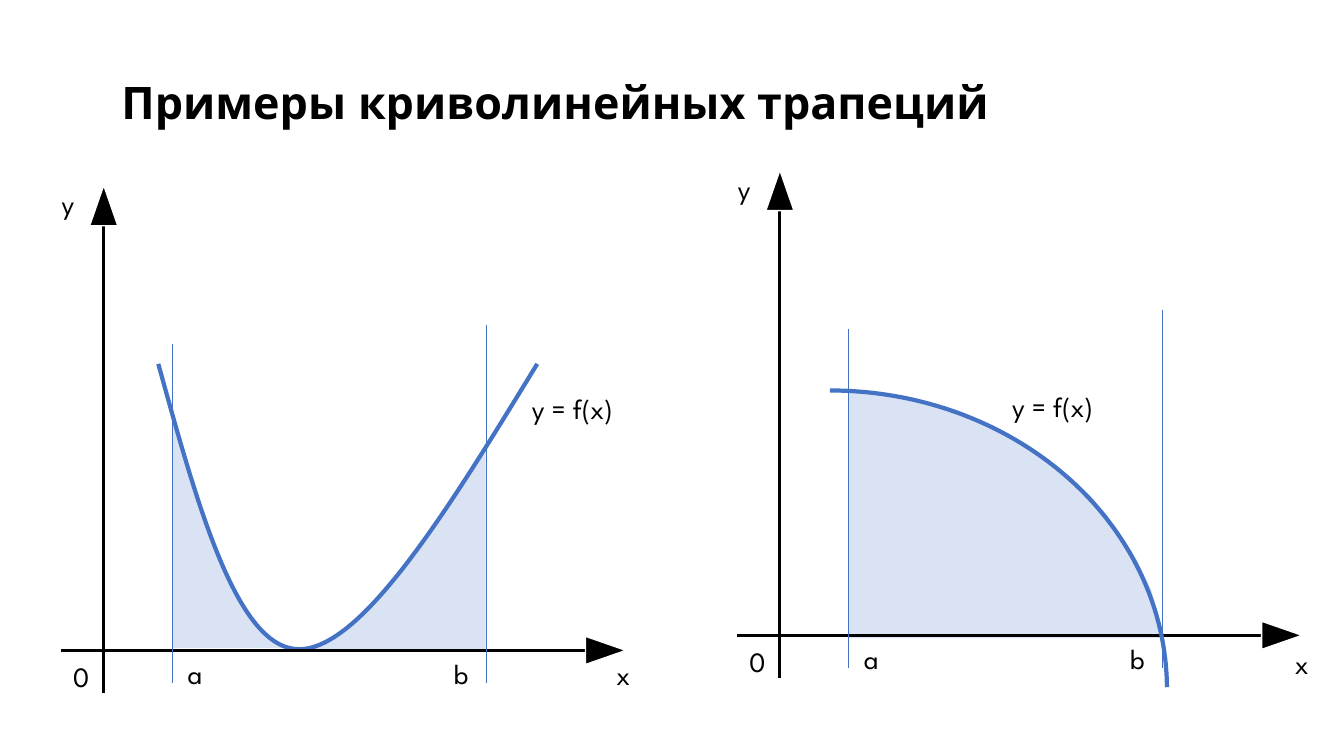
from lxml import etree
from pptx import Presentation
from pptx.dml.color import RGBColor
from pptx.enum.shapes import MSO_CONNECTOR, MSO_SHAPE
from pptx.enum.text import MSO_AUTO_SIZE, PP_ALIGN
from pptx.oxml.ns import qn
from pptx.util import Cm, Pt

STRAIGHT = MSO_CONNECTOR.STRAIGHT
TRIANGLE, ARC = MSO_SHAPE.ISOSCELES_TRIANGLE, MSO_SHAPE.ARC
GROW = MSO_AUTO_SIZE.SHAPE_TO_FIT_TEXT
LEFT, CENTER = PP_ALIGN.LEFT, PP_ALIGN.CENTER

BLACK = RGBColor(0x00, 0x00, 0x00)
WHITE = RGBColor(0xFF, 0xFF, 0xFF)
BLUE = RGBColor(0x44, 0x72, 0xC4)
PALE_BLUE = RGBColor(0xDA, 0xE3, 0xF3)

# Shared geometry in centimetres
AXIS_X, AXIS_Y = 2.61, 16.39
LIMIT_A, LIMIT_B = 4.34, 12.25
SECOND_DX, SECOND_DY = 17.04, -0.38

# Start point, then three points for each Bezier segment
PARABOLA = [(3.99, 9.17), (4.98, 12.75), (5.97, 16.36), (7.54, 16.36),
            (9.14, 16.36), (11.35, 12.75), (13.54, 9.17)]

# Shaded regions under the curves
AREA_UNDER_ARC = [
    (21.39, 9.83), (22, 9.88), (22.78, 9.98), (23.7, 10.26), (24.26, 10.41),
    (25.02, 10.72), (25.78, 11.18), (26.29, 11.51), (26.7, 11.79), (27.03, 12.07),
    (27.46, 12.47), (27.89, 12.98), (28.24, 13.49), (28.63, 14.07), (29.01, 14.86),
    (29.24, 15.65), (29.29, 15.9), (29.29, 16.08), (21.39, 16.08)]
AREA_RIGHT_BRANCH = [
    (12.24, 11.28), (12.24, 16.38), (7.24, 16.38), (7.24, 16.28), (7.26, 16.31),
    (7.44, 16.33), (7.85, 16.31), (8.33, 16.05), (8.76, 15.77), (9.17, 15.42),
    (9.63, 14.96), (10.21, 14.25), (11.1, 12.98), (11.66, 12.19)]
AREA_LEFT_BRANCH = [
    (4.34, 10.36), (4.75, 11.79), (5.23, 13.36), (5.77, 14.58), (6.27, 15.54),
    (6.83, 16.08), (7.11, 16.23), (7.44, 16.33), (4.34, 16.33)]


class GraphSlide:
    font = "League Spartan"

    def __init__(self, slide):
        self.slide = slide

    def text(self, text, left, top, width, height=1.02, size=20, bold=False,
             align=CENTER):
        box = self.slide.shapes.add_textbox(Cm(left), Cm(top), Cm(width), Cm(height))
        frame = box.text_frame
        frame.word_wrap = True
        frame.auto_size = GROW
        paragraph = frame.paragraphs[0]
        paragraph.text = text
        paragraph.alignment = align
        if align == CENTER:
            paragraph.line_spacing = 1.07
            paragraph.space_after = Pt(8)
        font = paragraph.font
        font.name, font.size, font.bold = self.font, Pt(size), bold
        font.color.rgb = BLACK

    def line(self, x1, y1, x2, y2, color, weight):
        line = self.slide.shapes.add_connector(STRAIGHT, Cm(x1), Cm(y1), Cm(x2), Cm(y2))
        line.line.color.rgb = color
        line.line.width = Pt(weight)
        etree.SubElement(line._element.spPr, qn("a:effectLst"))

    def arrowhead(self, left, top, rotation=0):
        head = self.slide.shapes.add_shape(TRIANGLE, Cm(left), Cm(top), Cm(0.71), Cm(1.02))
        head.rotation = rotation
        self.paint(head, BLACK, WHITE, 1)

    def outline(self, points, closed):
        points = [(Cm(x), Cm(y)) for x, y in points]
        builder = self.slide.shapes.build_freeform(*points[0])
        builder.add_line_segments(points[1:], close=closed)
        return builder.convert_to_shape()

    def area(self, points):
        self.paint(self.outline(points, True), PALE_BLUE, None, 0)

    def curve(self, points):
        """Cubic Bezier curve: every three line segments become one curve."""
        shape = self.outline(points, False)
        segments = list(shape._element.iter(qn("a:lnTo")))
        for start in range(0, len(segments), 3):
            cubic = etree.Element(qn("a:cubicBezTo"))
            segments[start].addprevious(cubic)
            for segment in segments[start:start + 3]:
                cubic.append(segment[0])
                segment.getparent().remove(segment)
        self.paint(shape, None, BLUE, 3)

    def arc(self, left, top, width, height):
        arc = self.slide.shapes.add_shape(ARC, Cm(left), Cm(top), Cm(width), Cm(height))
        arc.adjustments[0], arc.adjustments[1] = 162, 215.79
        self.paint(arc, None, BLUE, 3)

    def paint(self, shape, fill, line, weight):
        shape.shadow.inherit = False
        if fill is None:
            shape.fill.background()
        else:
            shape.fill.solid()
            shape.fill.fore_color.rgb = fill
        if line is None:
            shape.line.fill.background()
        else:
            shape.line.color.rgb = line
            shape.line.width = Pt(weight)

    def axes(self, dx=0, dy=0):
        """Axes, limits and labels, shifted by dx and dy."""
        self.line(AXIS_X + dx, 5.18 + dy, AXIS_X + dx, 17.47 + dy, BLACK, 2.25)
        self.line(14.79 + dx, AXIS_Y + dy, 1.54 + dx, AXIS_Y + dy, BLACK, 2.25)
        self.arrowhead(2.26 + dx, 4.67 + dy)
        self.arrowhead(14.91 + dx, 15.88 + dy, 90)
        for x, top in ((LIMIT_A, 8.66), (LIMIT_B, 8.18)):
            self.line(x + dx, top + dy, x + dx, 17.22 + dy, BLUE, 0.5)
        for label, left, top, width in (("a", 4.09, 16.36, 1.65), ("b", 10.85, 16.36, 1.55),
                                        ("y", 0.46, 4.52, 2.51), ("0", 1.1, 16.43, 1.9)):
            self.text(label, left + dx, top + dy, width)


def main():
    presentation = Presentation()
    presentation.slide_width, presentation.slide_height = Cm(33.87), Cm(19.05)
    graph = GraphSlide(presentation.slides.add_slide(presentation.slide_layouts[6]))

    # Shaded regions and title
    for points in (AREA_UNDER_ARC, AREA_RIGHT_BRANCH, AREA_LEFT_BRANCH):
        graph.area(points)
    graph.text("Примеры криволинейных трапеций", 2.81, 1.77, 28.24, 1.63,
               size=32, bold=True, align=LEFT)

    # Parabola on the left
    graph.curve(PARABOLA)
    graph.axes()

    # Arc on the right
    graph.axes(SECOND_DX, SECOND_DY)
    graph.arc(12.42, 9.84, 16.99, 15.06)

    # Function and x labels
    for left, top in ((12.52, 9.68), (24.62, 9.63)):
        graph.text("y = f(x) ", left, top, 3.99)
    for left, top in ((14.3, 16.38), (31.4, 16.1)):
        graph.text("x", left, top, 2.82, 1.12)

    presentation.save("out.pptx")


if __name__ == "__main__":
    main()
